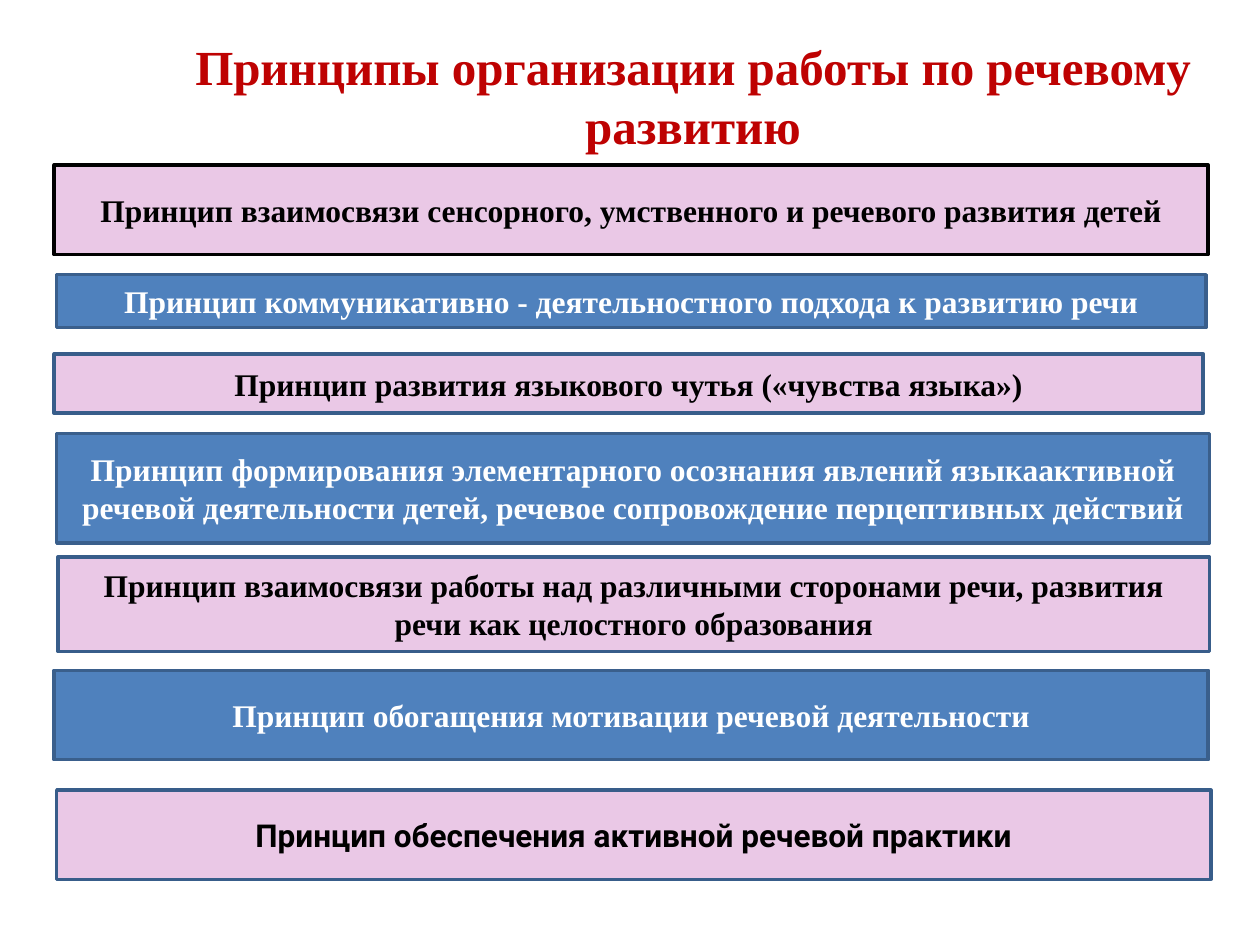
from dataclasses import dataclass

from pptx import Presentation
from pptx import util as u
from pptx.dml.color import RGBColor
from pptx.enum import shapes, text


@dataclass(frozen=True)
class Theme:
    serif: str = "Times New Roman"
    sans: str = "Roboto"
    title_size: int = 28
    body_size: int = 18
    line_width: int = 2
    red: str = "BE0202"
    black: str = "000000"
    white: str = "FFFFFF"
    pink: str = "EAC8E6"
    blue: str = "4F81BD"
    pink_edge: str = "385D8A"
    blue_edge: str = "3A5F8C"


THEME = Theme()

# Each principle: left, top, width, height in inches, then its wording
PRINCIPLES = [
    (0.43, 1.31, 9.16, 0.71, "Принцип взаимосвязи сенсорного, умственного и речевого развития детей"),
    (0.45, 2.18, 9.12, 0.42, "Принцип коммуникативно - деятельностного подхода к развитию речи"),
    (0.43, 2.81, 9.12, 0.47, "Принцип развития языкового чутья («чувства языка»)"),
    (0.45, 3.44, 9.15, 0.87, "Принцип формирования элементарного осознания явлений языкаактивной "
                             "речевой деятельности детей, речевое сопровождение перцептивных действий"),
    (0.46, 4.42, 9.14, 0.75, "Принцип взаимосвязи работы над различными сторонами речи, развития "
                             "речи как целостного образования"),
    (0.43, 5.32, 9.16, 0.71, "Принцип обогащения мотивации речевой деятельности"),
    (0.45, 6.27, 9.16, 0.71, "Принцип обеспечения активной речевой практики"),
]


def write_text(shape, wording, *, size, color, font=THEME.serif):
    frame = shape.text_frame
    frame.word_wrap = True
    frame.vertical_anchor = text.MSO_ANCHOR.MIDDLE
    paragraph = frame.paragraphs[0]
    paragraph.alignment = text.PP_ALIGN.CENTER
    run = paragraph.add_run()
    run.text = wording
    run.font.name = font
    run.font.size = u.Pt(size)
    run.font.bold = True
    run.font.color.rgb = RGBColor.from_string(color)


def add_title(slide, box, wording):
    shape = slide.shapes.add_textbox(*map(u.Inches, box))
    write_text(shape, wording, size=THEME.title_size, color=THEME.red)


def add_principle(slide, box, wording, *, fill, edge, color, font):
    shape = slide.shapes.add_shape(shapes.MSO_SHAPE.RECTANGLE, *map(u.Inches, box))
    shape.shadow.inherit = False
    shape.fill.solid()
    shape.fill.fore_color.rgb = RGBColor.from_string(fill)
    shape.line.color.rgb = RGBColor.from_string(edge)
    shape.line.width = u.Pt(THEME.line_width)
    write_text(shape, wording, size=THEME.body_size, color=color, font=font)


def add_principles(slide):
    last = len(PRINCIPLES) - 1
    for index, (*box, wording) in enumerate(PRINCIPLES):
        # Pink and blue bars alternate; the first has a black edge
        if index % 2:
            fill, edge, color = THEME.blue, THEME.blue_edge, THEME.white
        else:
            fill, edge, color = THEME.pink, THEME.pink_edge, THEME.black
        if index == 0:
            edge = THEME.black
        font = THEME.sans if index == last else THEME.serif
        add_principle(slide, box, wording, fill=fill, edge=edge, color=color, font=font)


def main():
    presentation = Presentation()
    presentation.slide_width = u.Inches(10)
    presentation.slide_height = u.Inches(7.5)
    slide = presentation.slides.add_slide(presentation.slide_layouts[6])

    # Heading
    add_title(slide, (1, 0.21, 9, 1.1), "Принципы организации работы по речевому развитию")
    # Stack of principles
    add_principles(slide)

    presentation.save("out.pptx")


if __name__ == "__main__":
    main()
